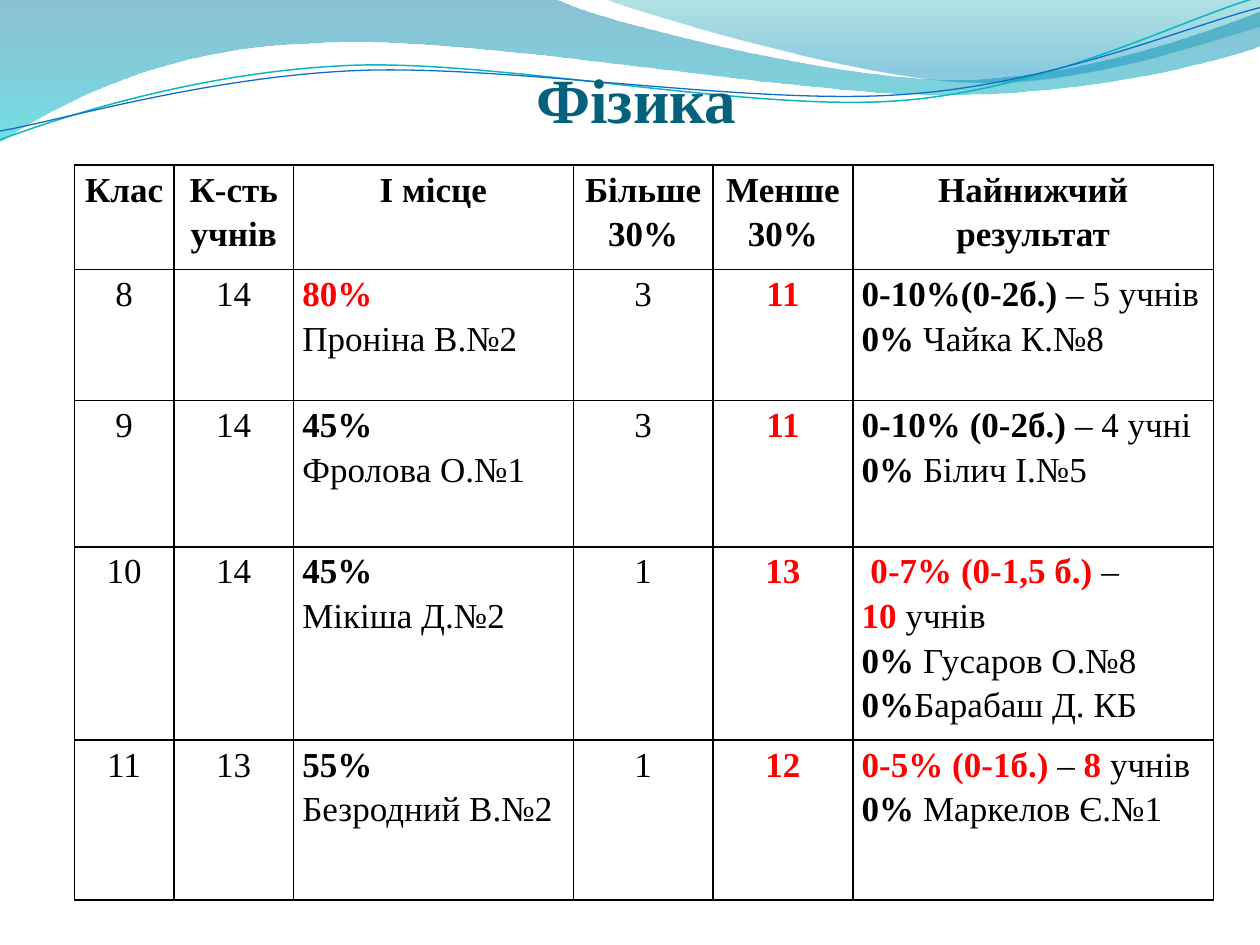
from math import cos, radians, sin

from lxml.etree import SubElement
from pptx import Presentation
from pptx.dml.color import RGBColor
from pptx.enum.text import MSO_ANCHOR, PP_ALIGN
from pptx.oxml.ns import qn
from pptx.util import Inches, Pt

FONT = "Times New Roman"
BLACK = RGBColor(0x00, 0x00, 0x00)
RED = RGBColor(0xFF, 0x00, 0x00)
TITLE_BLUE = RGBColor(0x04, 0x61, 0x7B)
DEEP_BLUE = RGBColor(0x00, 0x74, 0xA1)
TURQUOISE = RGBColor(0x00, 0xC6, 0xCF)
TEAL = RGBColor(0x00, 0xA1, 0xA9)
BLUE = RGBColor(0x00, 0x8B, 0xBF)
LINE_TEAL = RGBColor(0x0A, 0xB8, 0xBF)
LINE_BLUE = RGBColor(0x0F, 0x6F, 0xC6)

# Text styles: (colour, bold)
PLAIN, BOLD, ALERT = (BLACK, False), (BLACK, True), (RED, True)

COL_WIDTHS = [0.79, 0.95, 2.22, 1.11, 1.11, 2.86]
ROW_HEIGHTS = [0.83, 1.04, 1.16, 1.07, 1.27]
LEFT_COLS = (2, 5)
HEADERS = ["Клас", "К-сть учнів", "І місце", "Більше\n30%", "Менше 30%",
           "Найнижчий результат"]

# Class, pupils, best score, its style, winner, above 30%, below 30%, lowest results
RESULTS = [
    ("8", "14", "80%", ALERT, "Проніна В.№2", "3", "11",
     [[("0-10%(0-2б.) ", BOLD), ("– 5 учнів", PLAIN)],
      [("0% ", BOLD), ("Чайка К.№8", PLAIN)]]),
    ("9", "14", "45%", BOLD, "Фролова О.№1", "3", "11",
     [[("0-10% (0-2б.) ", BOLD), ("– 4 учні", PLAIN)],
      [("0% ", BOLD), ("Білич І.№5", PLAIN)]]),
    ("10", "14", "45%", BOLD, "Мікіша Д.№2", "1", "13",
     [[(" ", PLAIN), ("0-7% (0-1,5 б.) ", ALERT), ("–", PLAIN)],
      [("10", ALERT), (" учнів", PLAIN)],
      [("0% ", BOLD), ("Гусаров О.№8", PLAIN)],
      [("0%", BOLD), ("Барабаш Д. КБ", PLAIN)]]),
    ("11", "13", "55%", BOLD, "Безродний В.№2", "1", "12",
     [[("0-5% (0-1б.) ", ALERT), ("– ", PLAIN), ("8 ", ALERT), ("учнів", PLAIN)],
      [("0% ", BOLD), ("Маркелов Є.№1", PLAIN)]]),
]

# Wave outlines: a pair is a straight step, six numbers are a Bezier curve
BACK_WAVE = [(0, 0), (4.4, -0.01), (4.76, 0.17, 6.64, 0.63, 7.58, 0.63),
             (8.53, 0.63, 9.58, 0.26, 10, 0.09), (10.01, 0.36),
             (9.83, 0.44, 8.7, 0.76, 7.46, 0.75),
             (6.22, 0.75, 3.82, 0.28, 2.57, 0.34),
             (1.29, 0.36, 0.46, 0.83, -0.01, 1.13), (0, 0)]
FRONT_WAVE = [(4.79, -0.01), (5.09, 0.11, 6.82, 0.62, 7.69, 0.65),
              (8.56, 0.69, 9.61, 0.32, 10, 0.21), (10, 0), (4.79, -0.01)]
TEAL_CURVE = [(0, 1.11), (0.48, 0.93, 1.58, 0.57, 2.77, 0.52),
              (3.95, 0.47, 5.93, 0.89, 7.13, 0.8),
              (8.33, 0.71, 9.38, 0.15, 9.98, -0.02)]
BLUE_CURVE = [(0, 1.04), (0.47, 0.96, 1.64, 0.61, 2.83, 0.56),
              (4.03, 0.51, 5.97, 0.84, 7.17, 0.75),
              (8.36, 0.67, 9.41, 0.21, 10, 0.06)]
CURVE_TILT = -2.7


def add_outline(s, box, outline, close, tilt=0):
    """Draw an outline given in slide inches inside a box tilted by some degrees."""
    left, top, width, height = box
    builder = s.shapes.build_freeform(Inches(left), Inches(top), scale=1.0)
    builder.add_line_segments([(Inches(left + width), Inches(top + height))], close=False)
    sp = builder.convert_to_shape()
    sp.shadow.inherit = False
    sp.rotation = tilt % 360

    # Replace the box diagonal with the curved steps
    outline_path = next(sp.element.iter(qn("a:path")))
    for step in list(outline_path):
        outline_path.remove(step)
    turn_cos, turn_sin = cos(radians(-tilt)), sin(radians(-tilt))
    for i, part in enumerate(outline):
        tag = "cubicBezTo" if len(part) == 6 else "lnTo" if i else "moveTo"
        step = SubElement(outline_path, qn(f"a:{tag}"))
        for x, y in zip(part[::2], part[1::2]):
            dx, dy = x - left - width / 2, y - top - height / 2
            SubElement(step, qn("a:pt"),
                       x=str(Inches(width / 2 + dx * turn_cos - dy * turn_sin)),
                       y=str(Inches(height / 2 + dx * turn_sin + dy * turn_cos)))
    if close:
        SubElement(outline_path, qn("a:close"))
    return sp


def add_wave(s, box, outline, stops):
    sp = add_outline(s, box, outline, True)
    sp.line.fill.background()
    sp.fill.gradient()
    sp.fill.gradient_angle = 270
    for stop, (position, color, _) in zip(sp.fill.gradient_stops, stops):
        stop.position = position
        stop.color.rgb = color
    for clr, (_, _, opacity) in zip(sp.element.spPr.iter(qn("a:srgbClr")), stops):
        SubElement(clr, qn("a:alpha"), val=str(opacity * 1000))


def add_curve(s, box, outline, color, width):
    sp = add_outline(s, box, outline, False, CURVE_TILT)
    sp.fill.background()
    sp.line.color.rgb = color
    sp.line.width = Pt(width)


def add_run(p, text, size, color, bold):
    r = p.add_run()
    r.text = text
    r.font.name = FONT
    r.font.size = Pt(size)
    r.font.bold = bold
    r.font.color.rgb = color


def add_title(s, text):
    sp = s.shapes.add_textbox(Inches(0.51), Inches(0.21), Inches(9.08), Inches(0.87))
    tf = sp.text_frame
    tf.word_wrap = True
    tf.vertical_anchor = MSO_ANCHOR.BOTTOM
    tf.margin_left = tf.margin_right = tf.margin_bottom = 0
    tf.margin_top = Inches(0.05)
    p = tf.paragraphs[0]
    p.alignment = PP_ALIGN.CENTER
    add_run(p, text, 36, TITLE_BLUE, True)


def set_borders(cell):
    tcPr = cell._tc.get_or_add_tcPr()
    for side in ("lnL", "lnR", "lnT", "lnB"):
        ln = SubElement(tcPr, qn(f"a:{side}"), w=str(Pt(1)))
        fill = SubElement(ln, qn("a:solidFill"))
        SubElement(fill, qn("a:srgbClr"), val=str(BLACK))


def fill_cell(cell, paragraphs, align):
    set_borders(cell)
    cell.fill.background()
    cell.margin_left = cell.margin_right = Inches(0.07)
    cell.margin_top = cell.margin_bottom = 0
    tf = cell.text_frame
    for i, runs in enumerate(paragraphs):
        p = tf.add_paragraph() if i else tf.paragraphs[0]
        p.alignment = align
        p.line_spacing = 1.15
        for text, style in runs:
            add_run(p, text, 20, *style)


def table_rows():
    yield [[[(line, BOLD)] for line in header.split("\n")] for header in HEADERS]
    for grade, pupils, score, style, winner, above, below, lowest in RESULTS:
        yield [[[(grade, PLAIN)]], [[(pupils, PLAIN)]],
               [[(score, style)], [(winner, PLAIN)]],
               [[(above, PLAIN)]], [[(below, ALERT)]], lowest]


def add_results(s):
    frame = s.shapes.add_table(len(ROW_HEIGHTS), len(COL_WIDTHS), Inches(0.59),
                               Inches(1.31), Inches(9.06), Inches(5.83))
    table = frame.table
    table.first_row = table.horz_banding = False
    for col, width in zip(table.columns, COL_WIDTHS):
        col.width = Inches(width)
    for row, height in zip(table.rows, ROW_HEIGHTS):
        row.height = Inches(height)
    # The frame leaves room for the row that grows with its text
    frame.width, frame.height = Inches(9.06), Inches(5.83)
    for i, row in enumerate(table_rows()):
        for j, paragraphs in enumerate(row):
            left = i > 0 and j in LEFT_COLS
            fill_cell(table.cell(i, j), paragraphs,
                      PP_ALIGN.LEFT if left else PP_ALIGN.CENTER)


def main():
    prs = Presentation()
    prs.slide_width, prs.slide_height = Inches(10), Inches(7.5)
    s = prs.slides.add_slide(prs.slide_layouts[6])

    # Wave decoration
    add_wave(s, (-0.01, -0.01, 10.02, 1.14), BACK_WAVE,
             [(0, DEEP_BLUE, 45), (1, TURQUOISE, 55)])
    add_wave(s, (4.79, -0.01, 5.21, 0.7), FRONT_WAVE,
             [(0, TEAL, 30), (0.8, BLUE, 45)])
    add_curve(s, (-0.02, 0.22, 10.02, 0.71), TEAL_CURVE, LINE_TEAL, 0.85)
    add_curve(s, (-0.02, 0.3, 10.03, 0.58), BLUE_CURVE, LINE_BLUE, 0.75)

    # Title and results table
    add_title(s, "Фізика")
    add_results(s)

    prs.save("out.pptx")


if __name__ == "__main__":
    main()
